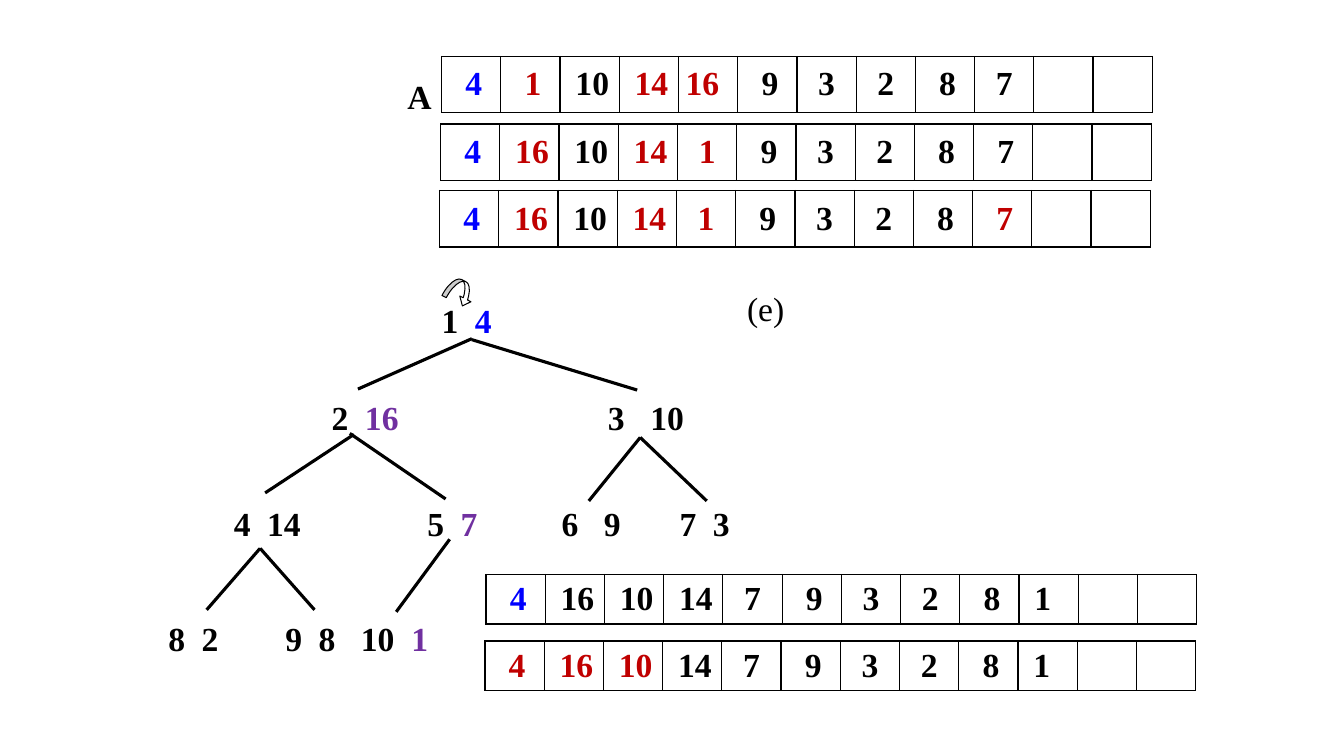
from dataclasses import dataclass

from pptx import Presentation
from pptx.dml.color import RGBColor
from pptx.enum.shapes import MSO_CONNECTOR, MSO_SHAPE
from pptx.enum.text import MSO_ANCHOR, PP_ALIGN
from pptx.oxml.ns import qn
from pptx.util import Inches, Pt
from lxml.etree import SubElement


@dataclass(frozen=True)
class Theme:
    font: str = "Times New Roman"
    size: float = 24
    black: str = "000000"
    white: str = "FFFFFF"
    blue: str = "0000FF"
    red: str = "C00000"
    purple: str = "7030A0"
    edge: float = 2.25
    border: float = 1
    arrow: float = 0.75


THEME = Theme()
COLUMNS, COLUMN_WIDTH = 12, 7.05 / 12
CELL_INSET, SPACE_WIDTH = 0.07, 0.083
KEY_GAP, NODE_WIDTH, LINE_HEIGHT = 0.33, 0.9, 0.5

# fmt: off
ARRAYS = [
    {"at": (4.38, 0.56), "height": 0.56, "values": (4, 1, 10, 14, 16, 9, 3, 2, 8, 7),
     "indents": "221102cc2c", "colors": {0: THEME.blue, 1: THEME.red, 3: THEME.red, 4: THEME.red}},
    {"at": (4.37, 1.23), "height": 0.56, "values": (4, 16, 10, 14, 1, 9, 3, 2, 8, 7),
     "indents": "2111c2cc22", "colors": {0: THEME.blue, 1: THEME.red, 3: THEME.red, 4: THEME.red}},
    {"at": (4.36, 1.89), "height": 0.56, "values": (4, 16, 10, 14, 1, 9, 3, 2, 8, 7),
     "indents": "2111c2cc22",
     "colors": {0: THEME.blue, 1: THEME.red, 3: THEME.red, 4: THEME.red, 9: THEME.red}},
    {"at": (4.82, 5.7), "height": 0.49, "values": (4, 16, 10, 14, 7, 9, 3, 2, 8, 1),
     "indents": "2111c2cc21", "colors": {0: THEME.blue}},
    {"at": (4.81, 6.36), "height": 0.49, "values": (4, 16, 10, 14, 7, 9, 3, 2, 8, 1),
     "indents": "2111c2cc21", "colors": {0: THEME.red, 1: THEME.red, 2: THEME.red}},
]
# fmt: on
TREE_LEVELS = [
    (2.93, [(4.38, 1, 4, KEY_GAP, THEME.blue)]),
    (3.89, [(3.29, 2, 16, KEY_GAP, THEME.purple), (6.03, 3, 10, 0.42, THEME.black)]),
    (4.94, [(2.32, 4, 14, KEY_GAP, THEME.black), (4.24, 5, 7, KEY_GAP, THEME.purple),
            (5.57, 6, 9, 0.42, THEME.black), (6.74, 7, 3, KEY_GAP, THEME.black)]),
    (6.08, [(1.67, 8, 2, KEY_GAP, THEME.black), (2.83, 9, 8, KEY_GAP, THEME.black),
            (3.58, 10, 1, 0.5, THEME.purple)]),
]
EDGES = [
    ((4.68, 3.36), (3.55, 3.86)),
    ((4.68, 3.37), (6.32, 3.87)),
    ((3.51, 4.31), (2.63, 4.89)),
    ((3.47, 4.3), (4.42, 4.95)),
    ((6.35, 4.34), (5.84, 4.97)),
    ((6.35, 4.34), (7.01, 4.97)),
    ((2.58, 5.44), (2.05, 6.05)),
    ((2.58, 5.44), (3.12, 6.05)),
    ((4.46, 5.35), (3.93, 6.07)),
]


def color(value):
    return RGBColor.from_string(value)


def add_span(para, text, tint=THEME.black, bold=True):
    span = para.add_run()
    span.text = str(text)
    span.font.name, span.font.size = THEME.font, Pt(THEME.size)
    span.font.bold, span.font.color.rgb = bold, color(tint)


def add_label(page, left, top, spans, width=NODE_WIDTH, bold=True, tab=None):
    box = page.shapes.add_textbox(Inches(left), Inches(top), Inches(width), Inches(LINE_HEIGHT))
    frame = box.text_frame
    frame.word_wrap, frame.vertical_anchor = True, MSO_ANCHOR.MIDDLE
    frame.margin_left = frame.margin_right = 0
    para = frame.paragraphs[0]
    if tab:
        stops = SubElement(para._p.get_or_add_pPr(), qn("a:tabLst"))
        SubElement(stops, qn("a:tab"), pos=str(Inches(tab)), algn="l")
    for text, tint in spans:
        add_span(para, text, tint, bold)


def add_borders(cell):
    properties = cell._tc.get_or_add_tcPr()
    for position, side in enumerate(("lnL", "lnR", "lnT", "lnB")):
        line = SubElement(properties, qn(f"a:{side}"), w=str(Pt(THEME.border)))
        fill = SubElement(line, qn("a:solidFill"))
        SubElement(fill, qn("a:srgbClr"), val=THEME.black)
        properties.insert(position, line)


def add_array(page, array):
    left, top = array["at"]
    table = page.shapes.add_table(1, COLUMNS, Inches(left), Inches(top),
                                  Inches(COLUMN_WIDTH * COLUMNS), Inches(array["height"])).table
    table.first_row = table.horz_banding = False
    for index, cell in enumerate(table.iter_cells()):
        table.columns[index].width = Inches(COLUMN_WIDTH)
        cell.fill.solid()
        cell.fill.fore_color.rgb = color(THEME.white)
        cell.vertical_anchor = MSO_ANCHOR.MIDDLE
        cell.margin_left = cell.margin_right = Inches(CELL_INSET)
        cell.margin_top = cell.margin_bottom = 0
        add_borders(cell)
        if index < len(array["values"]):
            para = cell.text_frame.paragraphs[0]
            indent = array["indents"][index]
            if indent == "c":
                para.alignment = PP_ALIGN.CENTER
            else:
                cell.margin_left = Inches(CELL_INSET + int(indent) * SPACE_WIDTH)
                cell.margin_right = 0
            add_span(para, array["values"][index], array["colors"].get(index, THEME.black))


def add_edge(page, start, end):
    edge = page.shapes.add_connector(MSO_CONNECTOR.STRAIGHT, *map(Inches, start + end))
    edge.line.color.rgb, edge.line.width = color(THEME.black), Pt(THEME.edge)
    SubElement(edge._element.spPr, qn("a:effectLst"))


def add_root_arrow(page):
    arrow = page.shapes.add_shape(MSO_SHAPE.CURVED_LEFT_ARROW, Inches(4.45), Inches(2.75),
                                  Inches(0.23), Inches(0.29))
    arrow.rotation, arrow.shadow.inherit = 297, False
    for index, amount in enumerate((0.21, 0.54, 0.33)):
        arrow.adjustments[index] = amount
    arrow.fill.solid()
    arrow.fill.fore_color.rgb = color(THEME.white)
    arrow.line.color.rgb, arrow.line.width = color(THEME.black), Pt(THEME.arrow)


def main():
    """Build the heap construction slide with its arrays and tree."""
    deck = Presentation()
    deck.slide_width, deck.slide_height = Inches(13.33), Inches(7.5)
    page = deck.slides.add_slide(deck.slide_layouts[6])
    for start, end in EDGES:
        add_edge(page, start, end)
    for top, nodes in TREE_LEVELS:
        for left, index, key, gap, tint in nodes:
            add_label(page, left, top, [(f"{index}\t", THEME.black), (key, tint)], tab=gap)
    add_label(page, 7.41, 2.81, [("(e)", THEME.black)], width=0.5, bold=False)
    add_root_arrow(page)
    add_label(page, 4.04, 0.7, [("A", THEME.black)], width=0.3)
    for array in ARRAYS:
        add_array(page, array)
    deck.save("out.pptx")


if __name__ == "__main__":
    main()
